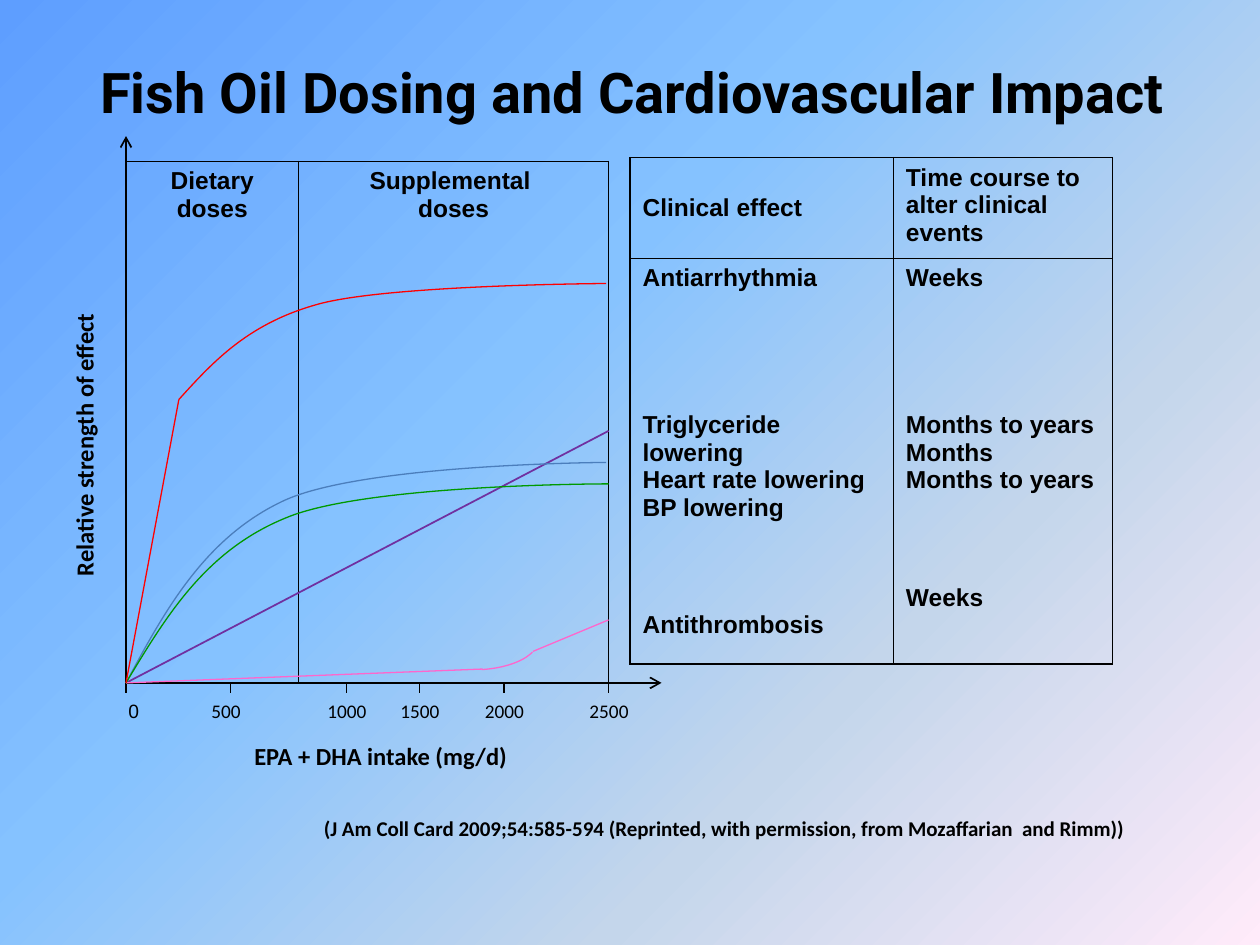
from lxml import etree
from pptx import Presentation
from pptx.dml.color import RGBColor
from pptx.enum.shapes import MSO_CONNECTOR as Connector, MSO_SHAPE as Preset
from pptx.enum.text import MSO_ANCHOR as Anchor, PP_ALIGN as Align
from pptx.oxml import parse_xml
from pptx.oxml.ns import nsdecls, qn
from pptx.util import Inches, Pt

BLACK = "000000"
PINK = "FF66CC"
RED = "FF0000"


def color(value):
    return RGBColor.from_string(value)


def write(frame, lines, font="Calibri", size=14, bold=True, align=Align.LEFT, gaps=None):
    frame.word_wrap = True
    for index, line in enumerate(lines):
        paragraph = frame.paragraphs[0] if index == 0 else frame.add_paragraph()
        paragraph.alignment = align
        if gaps and index in gaps:
            paragraph.space_before = Pt(gaps[index])
        run = paragraph.add_run()
        run.text = line
        run.font.name = font
        run.font.size = Pt(size)
        run.font.bold = bold
        run.font.color.rgb = color(BLACK)


def add_label(slide, text, left, top, width, height, rotation=0, indent=0.1, **style):
    box = slide.shapes.add_textbox(Inches(left), Inches(top), Inches(width), Inches(height))
    box.rotation = rotation
    box.text_frame.margin_left = Inches(indent)
    write(box.text_frame, [text], **style)


def add_line(slide, start, end, line_color=BLACK, width=0.75, arrow=False):
    points = [Inches(value) for value in (*start, *end)]
    line = slide.shapes.add_connector(Connector.STRAIGHT, *points)
    line.line.color.rgb = color(line_color)
    line.line.width = Pt(width)
    if arrow:
        etree.SubElement(line.line._get_or_add_ln(), qn("a:tailEnd"), type="arrow")
    etree.SubElement(line._element.spPr, qn("a:effectLst"))


def outline(shape, line_color):
    shape.shadow.inherit = False
    shape.fill.background()
    shape.line.color.rgb = color(line_color)
    shape.line.width = Pt(0.75)


def add_curve(slide, points, line_color):
    start, *controls = [(Inches(x), Inches(y)) for x, y in points]
    builder = slide.shapes.build_freeform(*start)
    builder.add_line_segments(controls, close=False)
    curve = builder.convert_to_shape()
    segments = list(curve._element.iter(qn("a:lnTo")))
    for index in range(0, len(segments), 3):
        bezier = etree.Element(qn("a:cubicBezTo"))
        segments[index].addprevious(bezier)
        for segment in segments[index:index + 3]:
            bezier.append(segment[0])
            segment.getparent().remove(segment)
    outline(curve, line_color)


def add_arc(slide, left, top, width, height, rotation, start_angle, line_color):
    arc = slide.shapes.add_shape(
        Preset.ARC, Inches(left), Inches(top), Inches(width), Inches(height))
    arc.rotation = rotation
    arc.adjustments[0] = start_angle
    arc.adjustments[1] = 0
    outline(arc, line_color)


def style_cell(cell):
    cell.fill.background()
    properties = cell._tc.get_or_add_tcPr()
    for index, side in enumerate(("lnL", "lnR", "lnT", "lnB")):
        properties.insert(index, parse_xml(
            f'<a:{side} {nsdecls("a")} w="12700"><a:solidFill>'
            f'<a:srgbClr val="{BLACK}"/></a:solidFill></a:{side}>'))


def add_grid(slide, left, top, columns, rows):
    table = slide.shapes.add_table(
        len(rows), len(columns), Inches(left), Inches(top),
        Inches(sum(columns)), Inches(sum(rows))).table
    table.first_row = False
    table.horz_banding = False
    for column, width in zip(table.columns, columns):
        column.width = Inches(width)
    for row, height in zip(table.rows, rows):
        row.height = Inches(height)
    for cell in table.iter_cells():
        style_cell(cell)
    return table


def add_background(slide):
    fill = slide.background.fill
    fill.gradient()
    gradient = slide.background._cSld.bg.bgPr.find(qn("a:gradFill"))
    stops = gradient.find(qn("a:gsLst"))
    for stop in list(stops):
        stops.remove(stop)
    for position, value in ((0, "5E9EFF"), (40, "85C2FF"), (70, "C4D6EB"), (100, "FFEBFA")):
        stop = etree.SubElement(stops, qn("a:gs"), pos=str(position * 1000))
        etree.SubElement(stop, qn("a:srgbClr"), val=value)
    direction = gradient.find(qn("a:lin"))
    direction.set("ang", str(45 * 60000))
    direction.set("scaled", "0")


def add_title(slide, left, top, width, height):
    title = slide.shapes.title
    title.left, title.top = Inches(left), Inches(top)
    title.width, title.height = Inches(width), Inches(height)
    frame = title.text_frame
    frame.vertical_anchor = Anchor.MIDDLE
    frame.margin_left = Inches(0.14)
    frame.margin_bottom = Inches(0.45)
    write(frame, ["Fish Oil Dosing and Cardiovascular Impact"],
          font="Roboto", size=32, align=Align.CENTER)


def add_dose_plot(slide, left, top, width, height):
    bottom = top + height
    split = 1.37
    doses = add_grid(slide, left, top, (split, width - split), (height,))
    for index, word in enumerate(("Dietary", "Supplemental ")):
        write(doses.cell(0, index).text_frame, [word, "doses"], font="Arial", align=Align.CENTER)

    add_label(slide, "Relative strength of effect", left - 1.62, top + 1.93, 2.58, 0.34, rotation=270)
    add_line(slide, (left, top + 0.05), (left, top - 0.2), width=1, arrow=True)
    add_line(slide, (left + 3.42, bottom), (left + 4.25, bottom), width=1, arrow=True)
    ticks = (("0", 0, 0.33), ("500", 0.83, 0.5), ("1000", 1.75, 0.67),
             ("1500", 2.33, 0.67), ("2000", 3, 0.58), ("2500", width, 0.58))
    for text, offset, label_width in ticks:
        x = left + offset
        add_line(slide, (x, bottom if offset else bottom - 0.09), (x, bottom + 0.08))
        add_label(slide, text, x - (0.25 if offset else 0.08), bottom + 0.08, label_width, 0.29,
                  size=11, bold=False, font="Calibri" if offset else "Arial")
    add_label(slide, "EPA + DHA intake (mg/d)", left + 0.92, bottom + 0.41, 2.5, 0.34)

    def at(x, y):
        return left + x, bottom - y

    origin = at(0, 0)
    add_line(slide, origin, at(width, 2), "7030A0", 1)
    add_line(slide, origin, at(2.83, 0.11), PINK)
    add_arc(slide, left + 2.61, bottom - 0.76, 0.4, 0.91, 86.6, 169.05, PINK)
    add_line(slide, at(3.23, 0.25), at(width, 0.5), PINK)
    add_curve(slide, [origin, at(0.31, 0.58), at(0.63, 1.16), at(1.26, 1.45),
                      at(1.9, 1.74), at(3.81, 1.75), at(3.81, 1.75)], "4B7EBC")
    add_curve(slide, [origin, at(0.32, 0.53), at(0.63, 1.05), at(1.27, 1.31),
                      at(1.91, 1.58), at(width, 1.58), at(width, 1.58)], "009900")
    add_line(slide, origin, at(0.42, 2.25), RED)
    add_curve(slide, [at(0.42, 2.25), at(0.7, 2.56), at(0.98, 2.86), at(1.54, 3.01),
                      at(2.11, 3.16), at(3.81, 3.17), at(3.81, 3.17)], RED)


def add_effects_table(slide, left, top, width, height):
    first_width, header_height = 2.09, 0.8
    table = add_grid(slide, left, top, (first_width, width - first_width),
                     (header_height, height - header_height))
    columns = (
        (["Clinical effect"],
         ["Antiarrhythmia", "Triglyceride lowering", "Heart rate lowering",
          "BP lowering", "Antithrombosis"]),
        (["Time course to", "alter clinical events"],
         ["Weeks", "Months to years", "Months", "Months to years", "Weeks"]),
    )
    for index, (heading, entries) in enumerate(columns):
        write(table.cell(0, index).text_frame, heading, font="Arial")
        write(table.cell(1, index).text_frame, entries, font="Arial", gaps={1: 68, 4: 51.5})
    table.cell(0, 0).vertical_anchor = Anchor.MIDDLE


def main():
    presentation = Presentation()
    presentation.slide_width = Inches(10)
    presentation.slide_height = Inches(7.5)
    slide = presentation.slides.add_slide(presentation.slide_layouts[5])
    add_background(slide)
    add_title(slide, 0.5, 0.3, 9, 1.25)
    add_dose_plot(slide, 1, 1.28, 3.83, 4.14)
    add_effects_table(slide, 5, 1.25, 3.83, 4.02)
    add_label(slide, "(J Am Coll Card 2009;54:585-594 (Reprinted, with permission, "
              "from Mozaffarian  and Rimm))", 1.83, 6.42, 7.25, 0.3, indent=0.74, size=12)
    presentation.save("out.pptx")


if __name__ == "__main__":
    main()
